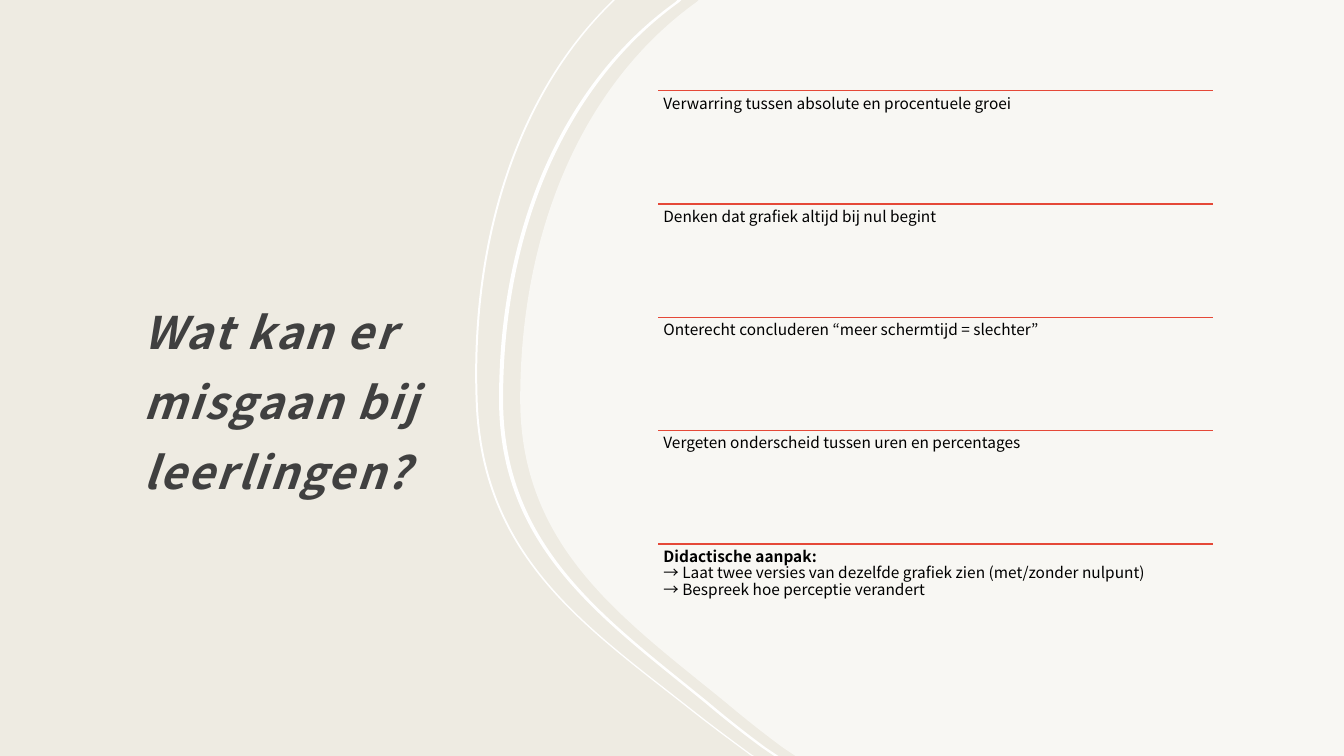
import copy

import pptx
import pptx.dml.color
import pptx.enum.shapes
import pptx.enum.text
import pptx.oxml.ns
import pptx.util
from lxml import etree
from pptx.util import Inches

FONT = "Noto Sans CJK JP"
COLORS = {
    "background": "EEEBE2",
    "wave": "FFFFFF",
    "title": "404040",
    "rule": "E54837",
    "text": "000000",
}
SLIDE_WIDTH, SLIDE_HEIGHT = 13.33, 7.5
PITFALLS = [
    ["Verwarring tussen absolute en procentuele groei"],
    ["Denken dat grafiek altijd bij nul begint"],
    ["Onterecht concluderen “meer schermtijd = slechter”"],
    ["Vergeten onderscheid tussen uren en percentages"],
    [
        "Didactische aanpak:",
        "→ Laat twee versies van dezelfde grafiek zien (met/zonder nulpunt)",
        "→ Bespreek hoe perceptie verandert",
    ],
]
PITFALL_LEFT, PITFALL_TOP, PITFALL_WIDTH = 6.53, 0.9, 5.5
PITFALL_STEP = 5.62 / len(PITFALLS)

INNER_WAVE = [
    [(6.72, 0), (6.7, 0.02)],
    [(6.7, 0.02), (5.57, 0.83), (4.95, 2.29), (4.95, 3.96)],
    [(4.95, 3.96), (4.95, 5.43), (5.96, 6.13), (6.99, 6.97)],
    [(6.99, 6.97), (7.18, 7.13), (7.37, 7.28), (7.56, 7.42)],
    [(7.56, 7.42), (7.68, 7.5)],
]
OUTER_WAVE = [
    [(6.08, 0), (6.05, 0.03)],
    [(6.05, 0.03), (5.12, 0.94), (4.65, 2.4), (4.72, 4.02)],
    [(4.72, 4.02), (4.79, 5.55), (5.82, 6.23), (6.87, 7.06)],
    [(6.87, 7.06), (7.06, 7.21), (7.25, 7.35), (7.44, 7.49)],
    [(7.44, 7.49), (7.46, 7.5)],
]


def rgb(name):
    return pptx.dml.color.RGBColor.from_string(COLORS[name])


def shifted(wave, distance):
    return [[(x + distance, y) for x, y in segment] for segment in wave]


def bend(outline, segments):
    lines = list(outline._element.iter(pptx.oxml.ns.qn("a:lnTo")))
    for line, segment in zip(lines, segments):
        if len(segment) == 2:
            continue
        line.tag = pptx.oxml.ns.qn("a:cubicBezTo")
        for index, (x, y) in enumerate(segment[1:-1]):
            control = etree.Element(pptx.oxml.ns.qn("a:pt"))
            control.set("x", str(Inches(x) - outline.left))
            control.set("y", str(Inches(y) - outline.top))
            line.insert(index, control)


def add_outline(slide, segments, opacity=None):
    start_x, start_y = segments[0][0]
    builder = slide.shapes.build_freeform(Inches(start_x), Inches(start_y), scale=1.0)
    ends = [(Inches(x), Inches(y)) for x, y in (segment[-1] for segment in segments)]
    builder.add_line_segments(ends, close=True)
    outline = builder.convert_to_shape()
    bend(outline, segments)
    outline.shadow.inherit = False
    outline.fill.solid()
    outline.fill.fore_color.rgb = rgb("wave")
    outline.line.fill.background()
    if opacity is not None:
        color = outline.fill._xPr.find(".//" + pptx.oxml.ns.qn("a:srgbClr"))
        alpha = etree.SubElement(color, pptx.oxml.ns.qn("a:alpha"))
        alpha.set("val", str(opacity * 1000))


def add_panel(slide, wave):
    bottom_right, top_right = (SLIDE_WIDTH, SLIDE_HEIGHT), (SLIDE_WIDTH, 0)
    corners = [[wave[-1][-1], bottom_right], [bottom_right, top_right]]
    add_outline(slide, wave + corners, opacity=60)


def add_ribbon(slide, wave, width):
    way_back = [segment[::-1] for segment in shifted(wave, width)[::-1]]
    add_outline(slide, wave + [[wave[-1][-1], way_back[0][0]]] + way_back)


def set_insets(frame, side, top, bottom):
    frame.margin_left = frame.margin_right = Inches(side)
    frame.margin_top = Inches(top)
    frame.margin_bottom = Inches(bottom)
    frame.word_wrap = True
    frame.auto_size = pptx.enum.text.MSO_AUTO_SIZE.NONE


def style_run(run, size, color, bold):
    run.font.name = FONT
    run.font.size = pptx.util.Pt(size)
    run.font.color.rgb = rgb(color)
    run.font.bold = bold


def fill_title(slide):
    title = slide.shapes.title
    title.left, title.top = Inches(1.3), Inches(1.21)
    title.width, title.height = Inches(3.3), Inches(4.68)
    frame = title.text_frame
    frame.text = "Wat kan er misgaan bij leerlingen?"
    set_insets(frame, 0.12, 0.81, 0.1)
    frame.vertical_anchor = pptx.enum.text.MSO_ANCHOR.MIDDLE
    question = frame.paragraphs[0]
    question.alignment = pptx.enum.text.PP_ALIGN.LEFT
    question.line_spacing = 1.3
    question.space_after = pptx.util.Pt(6)
    run = question.runs[0]
    style_run(run, 32, "title", True)
    run.font.italic = True
    run.font._rPr.set("spc", "150")


def add_rule(slide, top):
    rule = slide.shapes.add_connector(
        pptx.enum.shapes.MSO_CONNECTOR.STRAIGHT,
        Inches(PITFALL_LEFT), Inches(top),
        Inches(PITFALL_LEFT + PITFALL_WIDTH), Inches(top),
    )
    rule.line.color.rgb = rgb("rule")
    rule.line.width = pptx.util.Pt(1)
    etree.SubElement(rule._element.spPr, pptx.oxml.ns.qn("a:effectLst"))


def add_pitfall(slide, top, lines):
    add_rule(slide, top)
    pitfall = slide.shapes.add_textbox(
        Inches(PITFALL_LEFT), Inches(top), Inches(PITFALL_WIDTH), Inches(PITFALL_STEP)
    )
    frame = pitfall.text_frame
    set_insets(frame, 0.05, 0.05, 0.05)
    paragraph = frame.paragraphs[0]
    paragraph.text = "\v".join(lines)
    paragraph.line_spacing = 0.9
    for index, run in enumerate(paragraph.runs):
        style_run(run, 11, "text", len(lines) > 1 and index == 0)
    for line_break in paragraph._p.findall(pptx.oxml.ns.qn("a:br")):
        line_break.append(copy.deepcopy(paragraph.runs[0].font._rPr))


def main():
    deck = pptx.Presentation()
    deck.slide_width = Inches(SLIDE_WIDTH)
    deck.slide_height = Inches(SLIDE_HEIGHT)
    slide = deck.slides.add_slide(deck.slide_layouts[5])
    slide.background.fill.solid()
    slide.background.fill.fore_color.rgb = rgb("background")

    fill_title(slide)
    add_panel(slide, shifted(INNER_WAVE, 0.21))
    add_ribbon(slide, OUTER_WAVE, 0.02)
    add_ribbon(slide, INNER_WAVE, 0.04)
    for index, lines in enumerate(PITFALLS):
        add_pitfall(slide, PITFALL_TOP + index * PITFALL_STEP, lines)

    deck.save("out.pptx")


if __name__ == "__main__":
    main()
